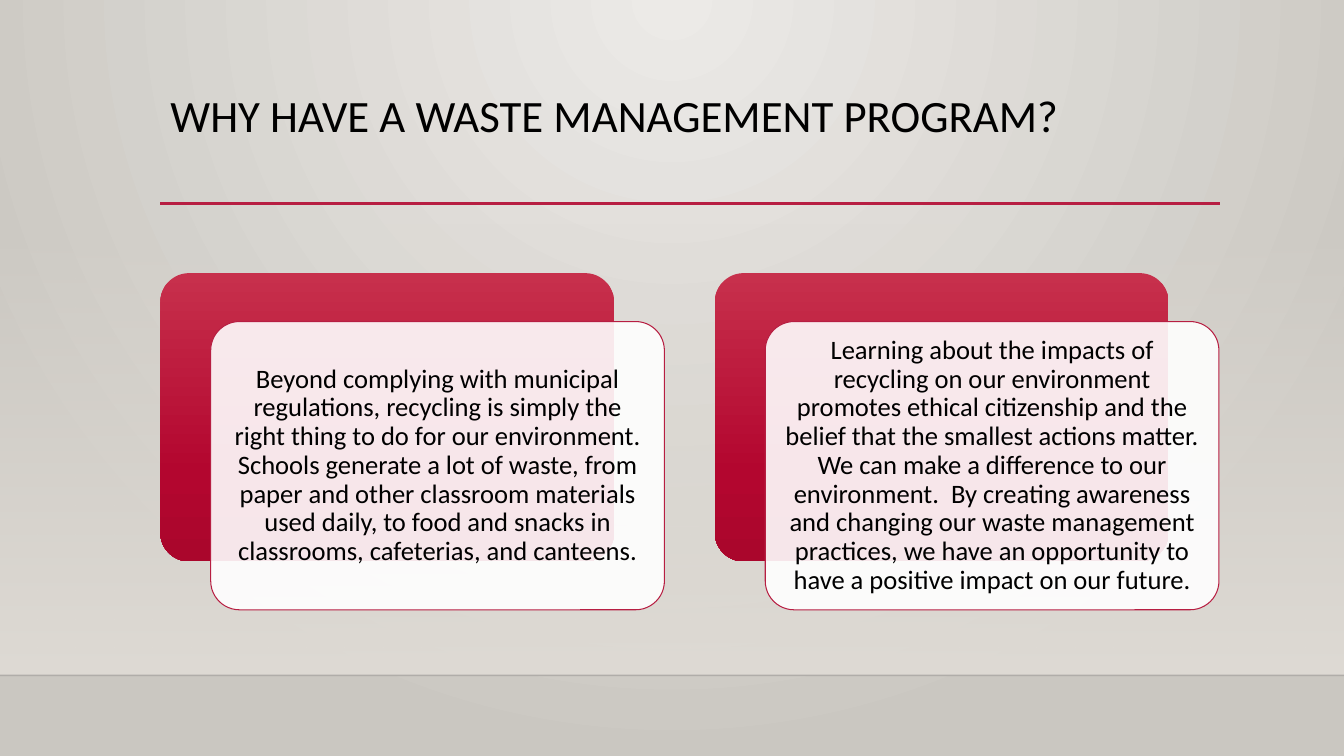
import pptx
import pptx.util
import pptx.dml.color
import pptx.enum.shapes
import pptx.enum.text
import pptx.oxml
import pptx.oxml.ns
from pptx.util import Inches

COLORS = {
    "crimson": "B71E42",
    "crimson_top": "C7304C",
    "crimson_mid": "B3062F",
    "crimson_low": "AA062C",
    "glow": "ECEAE7",
    "edge": "CAC7C1",
    "wall": "DFDBD5",
    "floor": "000001",
    "white": "FFFFFF",
    "text": "000000",
}
LINEAR = '<a:lin ang="5400000" scaled="0"/>'
RADIAL = ('<a:path path="circle"><a:fillToRect l="43000" t="0" r="43000" '
          'b="100000"/></a:path>')
CARD_TEXTS = [
    "Beyond complying with municipal regulations, recycling is simply the right "
    "thing to do for our environment. Schools generate a lot of waste, from paper "
    "and other classroom materials used daily, to food and snacks in classrooms, "
    "cafeterias, and canteens.",
    "Learning about the impacts of recycling on our environment promotes ethical "
    "citizenship and the belief that the smallest actions matter. We can make a "
    "difference to our environment.  By creating awareness and changing our waste "
    "management practices, we have an opportunity to have a positive impact on our "
    "future.",
]


def set_gradient(fill, parent, stops, direction):
    fill.solid()
    marks = "".join(
        f'<a:gs pos="{position * 1000}"><a:srgbClr val="{COLORS[name]}">'
        f'<a:alpha val="{alpha * 1000}"/></a:srgbClr></a:gs>'
        for position, name, alpha in stops)
    gradient = pptx.oxml.parse_xml(
        f'<a:gradFill {pptx.oxml.ns.nsdecls("a")} rotWithShape="1">'
        f'<a:gsLst>{marks}</a:gsLst>{direction}</a:gradFill>')
    solid = parent.find(pptx.oxml.ns.qn("a:solidFill"))
    parent.replace(solid, gradient)


def set_alpha(parent, percent):
    color = parent.find(".//" + pptx.oxml.ns.qn("a:srgbClr"))
    color.append(pptx.oxml.parse_xml(
        f'<a:alpha {pptx.oxml.ns.nsdecls("a")} val="{percent * 1000}"/>'))


deck = pptx.Presentation()
deck.slide_width = Inches(13.33)
deck.slide_height = Inches(7.5)
page = deck.slides.add_slide(deck.slide_layouts[5])

backdrop = page.background.fill
backdrop.solid()
set_gradient(backdrop, page.element.find(".//" + pptx.oxml.ns.qn("p:bgPr")),
             [(0, "glow", 100), (100, "edge", 100)], RADIAL)

wall = page.shapes.add_shape(pptx.enum.shapes.MSO_SHAPE.RECTANGLE,
                             0, Inches(2.21), Inches(13.33), Inches(4.49))
wall.shadow.inherit = False
wall.line.fill.background()
set_gradient(wall.fill, wall.element.spPr,
             [(0, "wall", 0), (100, "wall", 100)], LINEAR)

for left, right, top, color, width, opacity in [
        (0, 13.33, 6.7, "floor", 1, 20),
        (1.59, 12.1, 2.02, "crimson", 2.5, 100)]:
    rule = page.shapes.add_connector(pptx.enum.shapes.MSO_CONNECTOR.STRAIGHT,
                                     Inches(left), Inches(top),
                                     Inches(right), Inches(top))
    rule.line.color.rgb = pptx.dml.color.RGBColor.from_string(COLORS[color])
    rule.line.width = pptx.util.Pt(width)
    set_alpha(rule.line._ln, opacity)
    rule._element.spPr.append(pptx.oxml.parse_xml(
        f'<a:effectLst {pptx.oxml.ns.nsdecls("a")}/>'))

title = page.shapes.title
title.left, title.top = Inches(1.59), Inches(0.88)
title.width, title.height = Inches(10.5), Inches(1.15)
title.text_frame.text = "WHY HAVE A WASTE MANAGEMENT PROGRAM?"
title.text_frame.vertical_anchor = pptx.enum.text.MSO_ANCHOR.TOP
title.text_frame.word_wrap = True
title_para = title.text_frame.paragraphs[0]
title_para.alignment = pptx.enum.text.PP_ALIGN.LEFT

styled = [(title_para, 32)]
for index, text in enumerate(CARD_TEXTS):
    left = 1.59 + index * 5.5
    panel, card = [
        page.shapes.add_shape(pptx.enum.shapes.MSO_SHAPE.ROUNDED_RECTANGLE,
                              Inches(left + shift_x), Inches(top),
                              Inches(4.5), Inches(2.86))
        for shift_x, top in [(0, 2.71), (0.5, 3.19)]]
    for shape in (panel, card):
        shape.shadow.inherit = False
        shape.adjustments[0] = 0.1

    panel.line.fill.background()
    set_gradient(panel.fill, panel.element.spPr,
                 [(0, "crimson_top", 100), (69, "crimson_mid", 100),
                  (100, "crimson_low", 100)], LINEAR)

    card.fill.solid()
    card.fill.fore_color.rgb = pptx.dml.color.RGBColor.from_string(COLORS["white"])
    set_alpha(card.element.spPr, 90)
    card.line.color.rgb = pptx.dml.color.RGBColor.from_string(COLORS["crimson"])
    card.line.width = pptx.util.Pt(0.75)

    frame = card.text_frame
    frame.text = text
    frame.word_wrap = True
    frame.vertical_anchor = pptx.enum.text.MSO_ANCHOR.MIDDLE
    frame.margin_left = frame.margin_right = Inches(0.08)
    frame.margin_top = frame.margin_bottom = Inches(0.08)
    para = frame.paragraphs[0]
    para.alignment = pptx.enum.text.PP_ALIGN.CENTER
    styled.append((para, 19))

for para, size in styled:
    para.line_spacing = 0.9
    span = para.runs[0]
    span.font.name = "Calibri"
    span.font.size = pptx.util.Pt(size)
    span.font.color.rgb = pptx.dml.color.RGBColor.from_string(COLORS["text"])

deck.save("out.pptx")
